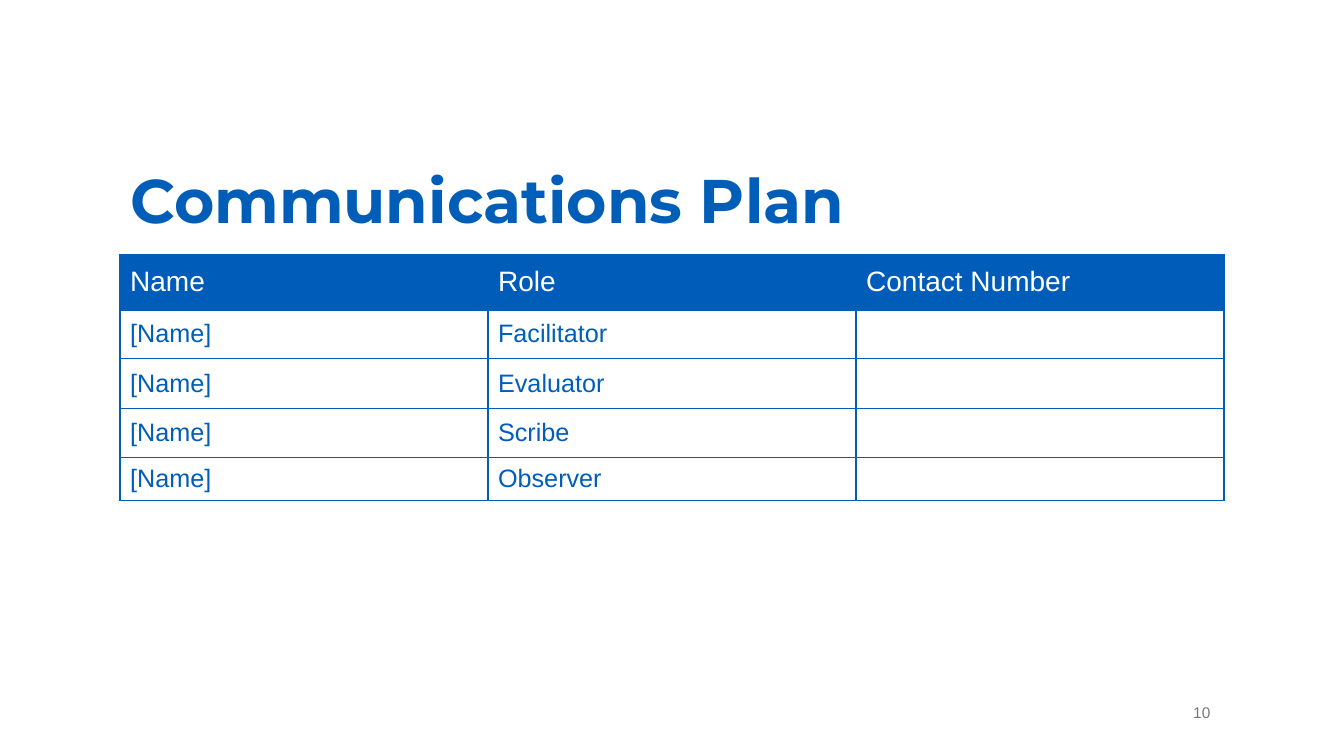
from dataclasses import dataclass

from lxml.etree import SubElement
from pptx import Presentation
from pptx.dml.color import RGBColor
from pptx.enum.text import MSO_ANCHOR, PP_ALIGN
from pptx.oxml.ns import qn
from pptx.util import Inches, Pt


@dataclass(frozen=True)
class Theme:
    blue: str = "005EB8"
    header_fill: str = "005CB9"
    white: str = "FFFFFF"
    grey: str = "77777A"
    title_font: str = "Montserrat"
    body_font: str = "Arial"
    title_size: int = 44
    header_size: int = 20
    body_size: int = 18
    number_size: int = 11
    thin_line: int = 1
    thick_line: int = 3


THEME = Theme()
TABLE_ROWS = [
    ("Name", "Role", "Contact Number"),
    ("[Name]", "Facilitator", ""),
    ("[Name]", "Evaluator", ""),
    ("[Name]", "Scribe", ""),
    ("[Name]", "Observer", ""),
]
ROW_HEIGHTS = [0.54, 0.49, 0.49, 0.49, 0.43]


def write_text(frame, text, *, size, color, font=THEME.body_font, bold=False,
               align=PP_ALIGN.LEFT, line_spacing=None):
    """Put one formatted paragraph in a text frame."""
    frame.word_wrap = True
    paragraph = frame.paragraphs[0]
    paragraph.alignment = align
    paragraph.line_spacing = line_spacing
    if text:
        run = paragraph.add_run()
        run.text = text
        run.font.name = font
        run.font.size = Pt(size)
        run.font.bold = bold
        run.font.color.rgb = RGBColor.from_string(color)


def set_borders(cell, **widths):
    """Draw the cell's borders; the lines must come before the fill."""
    properties = cell._tc.get_or_add_tcPr()
    for side in ("L", "R", "T", "B"):
        width = widths.get(side, THEME.thin_line)
        line = SubElement(properties, qn(f"a:ln{side}"), w=str(Pt(width)))
        fill = SubElement(line, qn("a:solidFill"))
        SubElement(fill, qn("a:srgbClr"), val=THEME.blue)


def add_title(slide, text, box):
    title = slide.shapes.title
    title.left, title.top, title.width, title.height = map(Inches, box)
    title.text_frame.vertical_anchor = MSO_ANCHOR.MIDDLE
    write_text(title.text_frame, text, size=THEME.title_size, color=THEME.blue,
               font=THEME.title_font, bold=True, line_spacing=0.9)


def add_contact_table(slide, rows, heights, box):
    shape = slide.shapes.add_table(len(rows), len(rows[0]), *map(Inches, box))
    table = shape.table
    for column in table.columns:
        column.width = Inches(box[2] / len(rows[0]))
    for row_index, (texts, height) in enumerate(zip(rows, heights)):
        is_header = row_index == 0
        table.rows[row_index].height = Inches(height)
        # The thick rule is shared by the header and the first body row
        rule = {0: {"B": THEME.thick_line}, 1: {"T": THEME.thick_line}}.get(row_index, {})
        for column_index, text in enumerate(texts):
            cell = table.cell(row_index, column_index)
            set_borders(cell, **rule)
            cell.fill.solid()
            cell.fill.fore_color.rgb = RGBColor.from_string(
                THEME.header_fill if is_header else THEME.white)
            cell.vertical_anchor = MSO_ANCHOR.MIDDLE
            write_text(cell.text_frame, text,
                       size=THEME.header_size if is_header else THEME.body_size,
                       color=THEME.white if is_header else THEME.blue)


def add_page_number(slide, number, box):
    frame = slide.shapes.add_textbox(*map(Inches, box)).text_frame
    frame.vertical_anchor = MSO_ANCHOR.MIDDLE
    write_text(frame, number, size=THEME.number_size, color=THEME.grey,
               align=PP_ALIGN.CENTER)


def main():
    presentation = Presentation()
    presentation.slide_width = Inches(13.33)
    presentation.slide_height = Inches(7.5)
    slide = presentation.slides.add_slide(presentation.slide_layouts[5])
    left = 1.19

    # Page number, heading and contact list
    add_page_number(slide, "10", (11.65, 6.86, 0.54, 0.41))
    add_title(slide, "Communications Plan", (left, 1.29, 11.5, 1.45))
    add_contact_table(slide, TABLE_ROWS, ROW_HEIGHTS,
                      (left, 2.53, 10.95, sum(ROW_HEIGHTS)))
    presentation.save("out.pptx")


if __name__ == "__main__":
    main()
